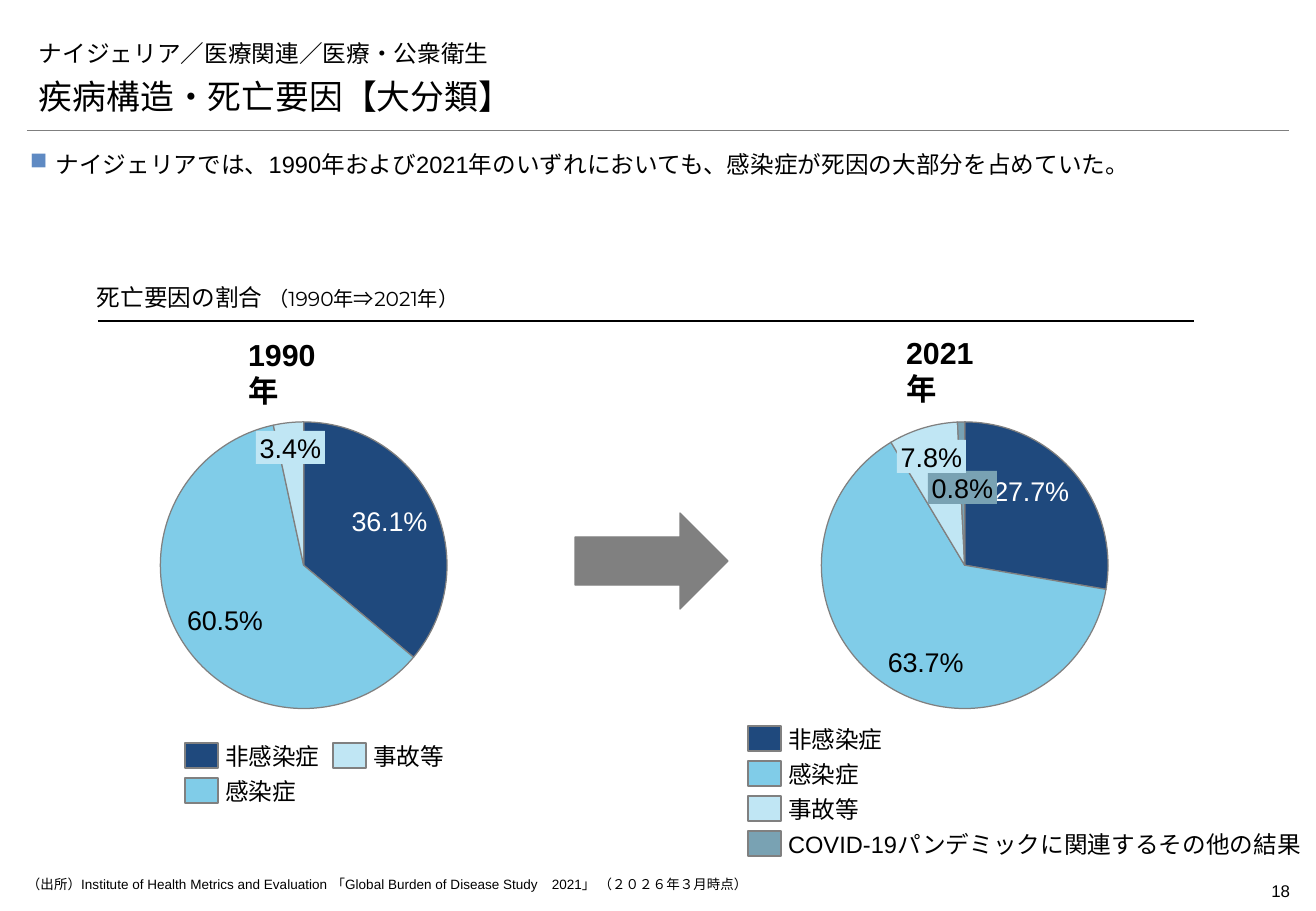
from dataclasses import dataclass

from lxml import etree
from pptx import Presentation, util as u
from pptx.chart.data import CategoryChartData
from pptx.dml.color import RGBColor
from pptx.enum import chart as ch, shapes, text
from pptx.oxml.ns import qn

PX = 7526  # EMU in one px


@dataclass(frozen=True)
class Theme:
    ink: str = "000000"
    white: str = "FFFFFF"
    rule: str = "7F7F7F"
    grey: str = "808080"
    bullet: str = "5F8AC3"
    causes: tuple = ("1F497D", "80CCE8", "C0E6F4", "79A2B3")
    sans: str = "Arial"
    display: str = "Montserrat"
    title: int = 20
    year: int = 18
    value: int = 16
    body: int = 14
    period: int = 12
    small: int = 10
    source: int = 8


T = Theme()
CAUSES = ("非感染症", "感染症", "事故等", "COVID-19パンデミックに関連するその他の結果")
NO_INSET = (0, 0, 0, 0)
TOP, MIDDLE, BOTTOM = (text.MSO_ANCHOR.TOP, text.MSO_ANCHOR.MIDDLE,
                       text.MSO_ANCHOR.BOTTOM)


def px(*lengths):
    return [u.Emu(v * PX) for v in lengths]


def rgb(value):
    return RGBColor.from_string(value)


def set_font(font, size, name=T.sans, color=T.ink, bold=False):
    for key, value in dict(size=u.Pt(size), name=name, bold=bold).items():
        setattr(font, key, value)
    font.color.rgb = rgb(color)


def write(sp, runs, font=T.sans, bold=False, align=None, anchor=TOP,
          inset=(12, 6, 12, 6), wrap=True):
    """Fill a shape with one paragraph made of (text, size) runs."""
    tf = sp.text_frame
    left, top, right, bottom = px(*inset)
    frame = dict(margin_left=left, margin_top=top, margin_right=right,
                 margin_bottom=bottom, vertical_anchor=anchor, word_wrap=wrap,
                 auto_size=text.MSO_AUTO_SIZE.NONE)
    for key, value in frame.items():
        setattr(tf, key, value)
    p = tf.paragraphs[0]
    p.alignment = align or text.PP_ALIGN.LEFT
    for words, size in runs:
        r = p.add_run()
        r.text = words
        set_font(r.font, size, font, bold=bold)
    return p


def add_text(s, box, runs, **fmt):
    return write(s.shapes.add_textbox(*px(*box)), runs, **fmt)


def add_rule(s, x1, x2, y, color, width):
    cx = s.shapes.add_connector(shapes.MSO_CONNECTOR.STRAIGHT, *px(x1, y, x2, y))
    cx.line.color.rgb = rgb(color)
    cx.line.width = u.Pt(width)
    etree.SubElement(cx._element.spPr, qn("a:effectLst"))


def add_block(s, kind, box, fill, outline=True):
    sp = s.shapes.add_shape(kind, *px(*box))
    sp.shadow.inherit = False
    sp.fill.solid()
    sp.fill.fore_color.rgb = rgb(fill)
    if outline:
        sp.line.color.rgb = rgb(T.grey)
        sp.line.width = u.Pt(0.75)
    else:
        sp.line.fill.background()
    return sp


def add_value_tag(s, x, y, words, fill):
    sp = add_block(s, shapes.MSO_SHAPE.RECTANGLE, (x, y, 69, 33), fill, False)
    write(sp, [(words, T.value)], align=text.PP_ALIGN.CENTER, anchor=MIDDLE,
          inset=(4, 0, 4, 0), wrap=False)


def add_legend(s, x, y, names, rows):
    for i, name in enumerate(names):
        left, top = x + i // rows * 148, y + i % rows * 35
        add_block(s, shapes.MSO_SHAPE.RECTANGLE, (left, top, 33, 25), T.causes[i])
        add_text(s, (left + 40, top - 1, min(24 * len(name), 480), 28),
                 [(name, T.body)], anchor=MIDDLE, inset=NO_INSET, wrap=False)


def add_pie(s, x, values):
    data = CategoryChartData()
    data.categories = [str(i + 1) for i in range(len(values))]
    data.add_series("Series 1", values)
    chart = s.shapes.add_chart(ch.XL_CHART_TYPE.PIE, *px(x, 365, 503, 401),
                               data).chart
    chart.has_title = chart.has_legend = False
    set_font(chart.font, T.small)
    plot = chart.plots[0]
    plot.vary_by_categories = True
    series = plot.series[0]
    series.data_labels.show_value = False

    for i in range(len(values)):
        fmt = series.points[i].format
        fmt.fill.solid()
        fmt.fill.fore_color.rgb = rgb(T.causes[i])
        fmt.line.color.rgb = rgb(T.grey)
        fmt.line.width = u.Pt(0.75)

    # Only the two large slices carry chart labels
    for i, color in enumerate((T.white, T.ink)):
        label = series.points[i].data_label
        set_font(label.font, T.value, color=color)
        label.position = ch.XL_LABEL_POSITION.INSIDE_END
    for idx in series._element.findall(".//" + qn("c:dLbl") + "/" + qn("c:idx")):
        num = etree.Element(qn("c:numFmt"), formatCode='0.0"%"', sourceLinked="0")
        idx.addnext(num)

    # Fixed inner plot area
    area = chart._chartSpace.find(".//" + qn("c:plotArea"))
    for old in area.findall(qn("c:layout")):
        area.remove(old)
    layout = etree.Element(qn("c:layout"))
    area.insert(0, layout)
    manual = etree.SubElement(layout, qn("c:manualLayout"))
    for tag, value in (("layoutTarget", "inner"), ("xMode", "edge"),
                       ("yMode", "edge"), ("x", "0.215"), ("y", "0.142"),
                       ("w", "0.571"), ("h", "0.715")):
        etree.SubElement(manual, qn("c:" + tag), val=value)


def add_bullet(p):
    pPr = p._p.get_or_add_pPr()
    pPr.set("marL", "192000")
    pPr.set("indent", "-192000")
    p.line_spacing = 1.1
    p.space_after = u.Pt(2)
    color = etree.SubElement(pPr, qn("a:buClr"))
    etree.SubElement(color, qn("a:srgbClr"), val=T.bullet)
    etree.SubElement(pPr, qn("a:buChar"), char="■")


def main():
    prs = Presentation()
    prs.slide_width, prs.slide_height = px(1316, 911)
    s = prs.slides.add_slide(prs.slide_layouts[5])

    # Header
    title = s.shapes.title
    title.left, title.top, title.width, title.height = px(27, 32, 1262, 41)
    write(title, [("ナイジェリア／医療関連／医療・公衆衛生", T.body)],
          font=T.display, anchor=BOTTOM)
    add_text(s, (27, 68, 1263, 54), [("疾病構造・死亡要因【大分類】", T.title)],
             font=T.display, anchor=BOTTOM)
    add_rule(s, 27, 1289, 130, T.rule, 0.25)

    # Key message
    message = "ナイジェリアでは、1990年および2021年のいずれにおいても、感染症が死因の大部分を占めていた。"
    add_bullet(add_text(s, (30, 147, 1263, 64), [(message, T.body)],
                        align=text.PP_ALIGN.JUSTIFY, inset=NO_INSET))

    # Section heading
    add_rule(s, 98, 1194, 321, T.ink, 0.75)
    add_text(s, (97, 283, 488, 38),
             [("死亡要因の割合 ", T.body), ("（1990年⇒2021年）", T.period)],
             font=T.display, anchor=BOTTOM, inset=(0, 6, 0, 10))

    # Years, pies and the arrow between them
    for x, y, year in ((236, 330, "1990年"), (894, 328, "2021年")):
        add_text(s, (x, y, 120, 49), [(year, T.year)], bold=True)
    add_block(s, shapes.MSO_SHAPE.RIGHT_ARROW, (575, 513, 153, 96), T.grey)
    add_pie(s, 52, (36.1, 60.5, 3.4))
    add_pie(s, 713, (27.7, 63.7, 7.8, 0.8))

    # Values of the small slices
    for x, y, words, cause in ((256, 431, "3.4%", 2), (928, 471, "0.8%", 3),
                               (897, 440, "7.8%", 2)):
        add_value_tag(s, x, y, words, T.causes[cause])

    # Legends
    add_legend(s, 185, 743, CAUSES[:3], 2)
    add_legend(s, 748, 726, CAUSES, 4)

    # Source and page number
    source = ("（出所）Institute of Health Metrics and Evaluation "
              "「Global Burden of Disease Study　2021」 （２０２６年３月時点）")
    add_text(s, (27, 876, 1177, 19), [(source, T.source)], inset=NO_INSET)
    add_text(s, (1194, 875, 96, 33), [("18", T.small)],
             align=text.PP_ALIGN.RIGHT, inset=(0, 6, 0, 6))

    prs.save("out.pptx")


if __name__ == "__main__":
    main()
